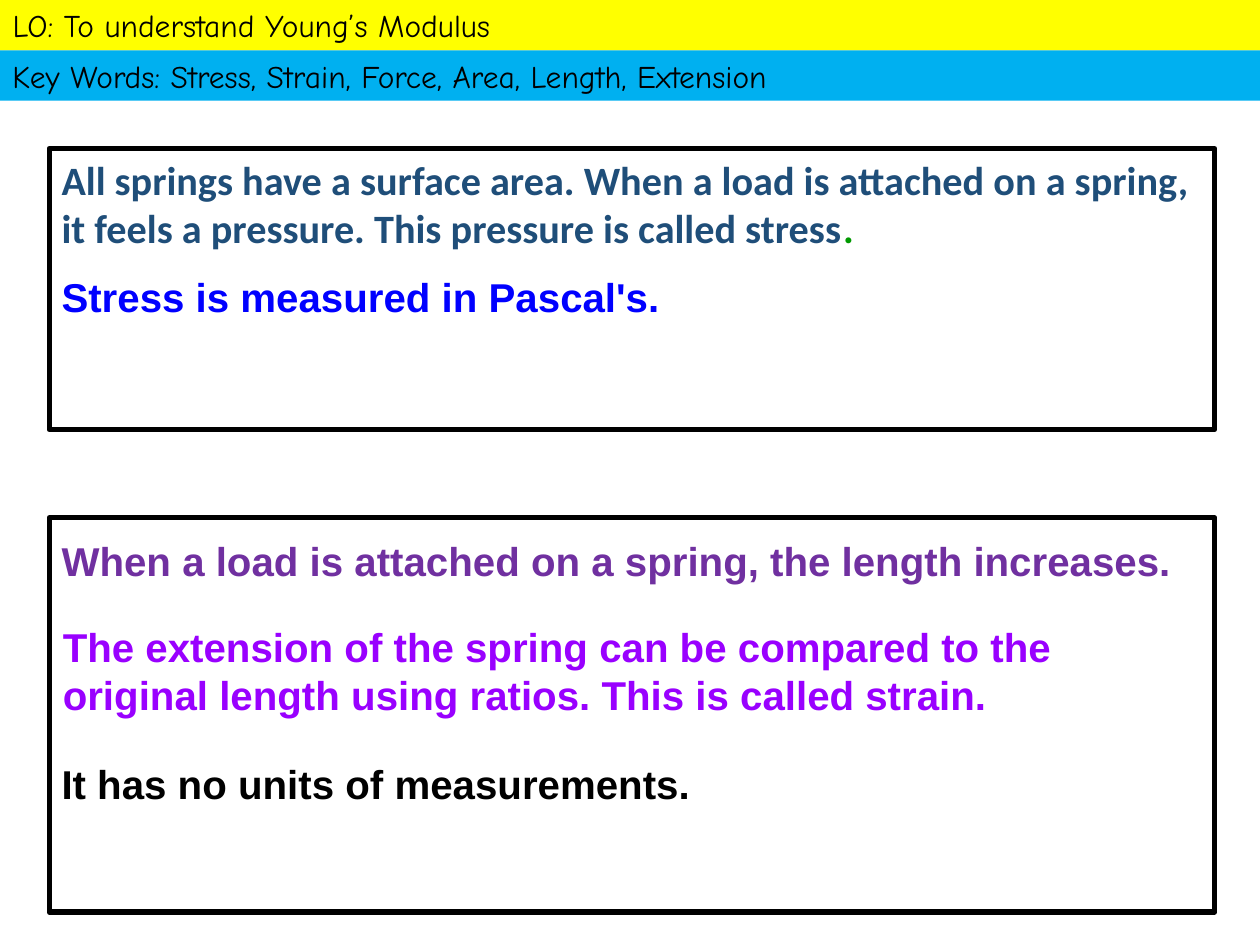
"""Build a physics slide that defines stress and strain."""
from dataclasses import dataclass

from pptx import Presentation
from pptx.dml.color import RGBColor
from pptx.enum.shapes import MSO_SHAPE
from pptx.enum.text import MSO_ANCHOR, MSO_AUTO_SIZE, PP_ALIGN
from pptx.util import Emu, Pt

EMU_PER_PX = 9144


@dataclass(frozen=True)
class Theme:
    yellow: str = "FFFF00"
    sky: str = "00B0F0"
    white: str = "FFFFFF"
    black: str = "000000"
    navy: str = "1F4E79"
    green: str = "009900"
    blue: str = "0000FF"
    purple: str = "7030A0"
    violet: str = "9900FF"
    banner_font: str = "Comic Neue"
    stress_font: str = "Calibri"
    body_font: str = "Arial"
    banner_size: float = 18
    body_size: float = 23
    body_leading: float = 27.6
    border: float = 3


THEME = Theme()


@dataclass(frozen=True)
class Box:
    left: int
    top: int
    width: int
    height: int

    def emu(self) -> tuple:
        return tuple(Emu(length * EMU_PER_PX) for length in
                     (self.left, self.top, self.width, self.height))


@dataclass(frozen=True)
class Statement:
    box: Box
    runs: tuple
    font: str = THEME.body_font


FRAMES = (Box(39, 411, 925, 313), Box(39, 118, 925, 223))
STATEMENTS = (
    Statement(Box(39, 118, 925, 88), (
        ("All springs have a surface area. When a load is attached on a spring, "
         "it feels a pressure. This pressure is called stress", THEME.navy),
        (".", THEME.green)), THEME.stress_font),
    Statement(Box(39, 421, 925, 48), (
        ("When a load is attached on a spring, the length increases.", THEME.purple),)),
    Statement(Box(39, 211, 890, 48), (("Stress is measured in Pascal's.", THEME.blue),)),
    Statement(Box(40, 489, 925, 87), (
        ("The extension of the spring can be compared to the original length "
         "using ratios. This is called strain.", THEME.violet),)),
    Statement(Box(39, 598, 890, 48), (("It has no units of measurements.", THEME.black),)),
)


def place(shape, box: Box) -> None:
    shape.left, shape.top, shape.width, shape.height = box.emu()


def paint(shape, color: str) -> None:
    shape.fill.solid()
    shape.fill.fore_color.rgb = RGBColor.from_string(color)


def add_run(paragraph, text: str, font: str, size: float, color: str, bold: bool) -> None:
    run = paragraph.add_run()
    run.text = text
    run.font.name = font
    run.font.size = Pt(size)
    run.font.bold = bold
    run.font.color.rgb = RGBColor.from_string(color)


def add_rectangle(slide, box: Box):
    shape = slide.shapes.add_shape(MSO_SHAPE.RECTANGLE, *box.emu())
    shape.shadow.inherit = False
    return shape


def format_banner(shape, text: str, fill: str) -> None:
    paint(shape, fill)
    shape.line.fill.background()
    frame = shape.text_frame
    frame.auto_size = MSO_AUTO_SIZE.NONE
    frame.word_wrap = True
    frame.vertical_anchor = MSO_ANCHOR.MIDDLE
    paragraph = frame.paragraphs[0]
    paragraph.alignment = PP_ALIGN.LEFT
    add_run(paragraph, text, THEME.banner_font, THEME.banner_size, THEME.black, False)


def add_frame(slide, box: Box) -> None:
    shape = add_rectangle(slide, box)
    paint(shape, THEME.white)
    shape.line.color.rgb = RGBColor.from_string(THEME.black)
    shape.line.width = Pt(THEME.border)


def add_statement(slide, statement: Statement) -> None:
    frame = slide.shapes.add_textbox(*statement.box.emu()).text_frame
    frame.word_wrap = True
    paragraph = frame.paragraphs[0]
    paragraph.line_spacing = Pt(THEME.body_leading)
    for text, color in statement.runs:
        add_run(paragraph, text, statement.font, THEME.body_size, color, True)


def main() -> None:
    presentation = Presentation()
    presentation.slide_width = Emu(1000 * EMU_PER_PX)
    presentation.slide_height = Emu(750 * EMU_PER_PX)
    slide = presentation.slides.add_slide(presentation.slide_layouts[5])
    title = slide.shapes.title
    place(title, Box(0, 0, 1000, 40))
    format_banner(title, "LO: To understand Young’s Modulus", THEME.yellow)
    key_words = add_rectangle(slide, Box(0, 40, 1000, 40))
    format_banner(key_words, "Key Words: Stress, Strain, Force, Area, Length, Extension",
                  THEME.sky)
    for box in FRAMES:
        add_frame(slide, box)
    for statement in STATEMENTS:
        add_statement(slide, statement)
    presentation.save("out.pptx")


if __name__ == "__main__":
    main()
